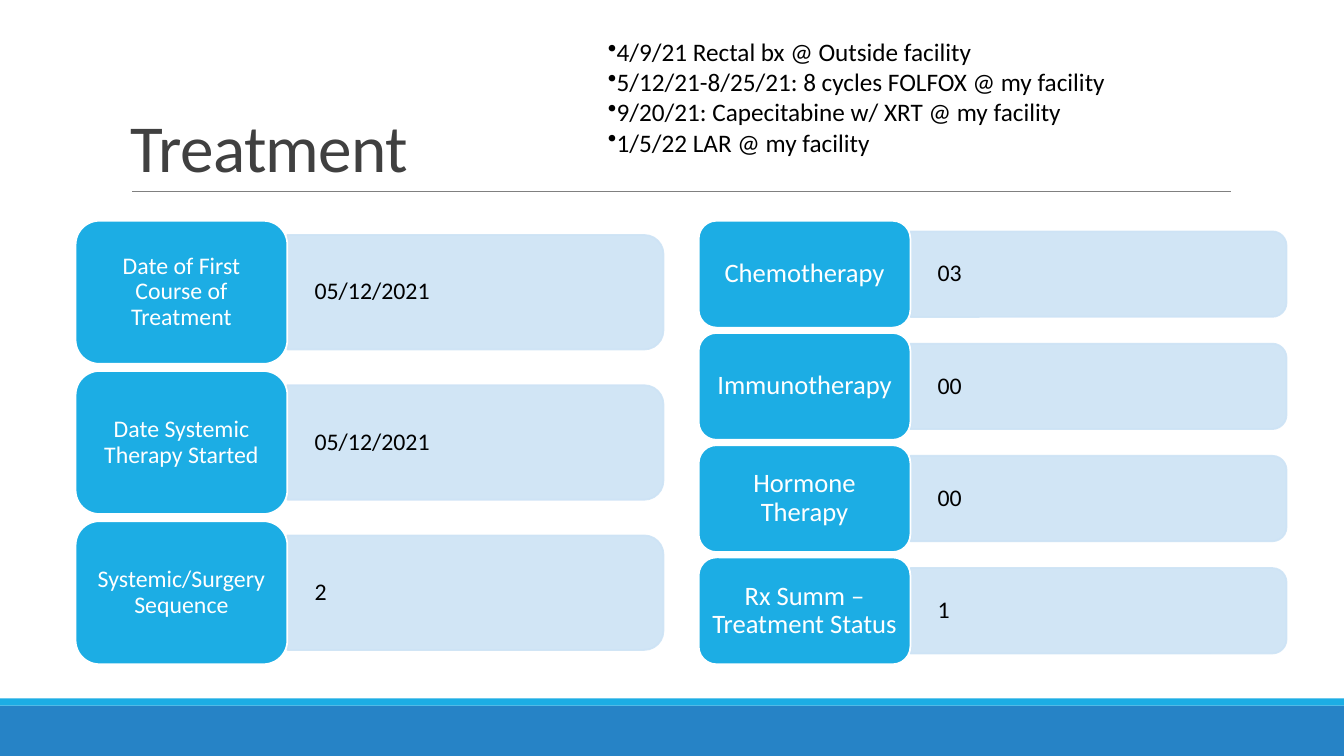
import pptx
import pptx.dml.color
import pptx.enum.shapes
import pptx.enum.text
import pptx.oxml
import pptx.oxml.ns
import pptx.util

Inches = pptx.util.Inches
Pt = pptx.util.Pt
Shape = pptx.enum.shapes.MSO_SHAPE
Align = pptx.enum.text.PP_ALIGN
Anchor = pptx.enum.text.MSO_ANCHOR
HUES = {"blue": "1CADE4", "base": "2683C6", "pale": "CDE3F5", "rule": "808080",
        "title": "404040", "black": "000000", "white": "FFFFFF"}
NOTES = ["4/9/21 Rectal bx @ Outside facility",
         "5/12/21-8/25/21: 8 cycles FOLFOX @ my facility",
         "9/20/21: Capecitabine w/ XRT @ my facility",
         "1/5/22 LAR @ my facility"]
DATES = [("Date of First Course of Treatment", "05/12/2021"),
         ("Date Systemic Therapy Started", "05/12/2021"),
         ("Systemic/Surgery Sequence", "2")]
CODES = [("Chemotherapy", "03"), ("Immunotherapy", "00"),
         ("Hormone Therapy", "00"), ("Rx Summ – Treatment Status", "1")]


class Deck:
    """Draws styled elements on the current slide."""

    def __init__(self, slide, face="Calibri"):
        self.slide = slide
        self.face = face

    def hue(self, name):
        return pptx.dml.color.RGBColor.from_string(HUES[name])

    def add(self, node, tag, **attrs):
        part = pptx.oxml.parse_xml(f'<a:{tag} {pptx.oxml.ns.nsdecls("a")}/>')
        for key, value in attrs.items():
            part.set(key, value)
        node.append(part)

    def shape(self, kind, left, top, width, height, fill, line=None):
        item = self.slide.shapes.add_shape(
            kind, Inches(left), Inches(top), Inches(width), Inches(height))
        item.shadow.inherit = False
        item.fill.solid()
        item.fill.fore_color.rgb = self.hue(fill)
        if line:
            item.line.color.rgb = self.hue(line)
            item.line.width = Pt(1.25)
        else:
            item.line.fill.background()
        return item

    def rule(self, left, top, right):
        item = self.slide.shapes.add_connector(
            pptx.enum.shapes.MSO_CONNECTOR.STRAIGHT,
            Inches(left), Inches(top), Inches(right), Inches(top))
        item.line.color.rgb = self.hue("rule")
        item.line.width = Pt(0.5)
        self.add(item._element.spPr, "effectLst")

    def box(self, left, top, width, height):
        return self.slide.shapes.add_textbox(
            Inches(left), Inches(top), Inches(width), Inches(height))

    def text(self, item, lines, size, color, align=Align.LEFT,
             anchor=Anchor.MIDDLE, inset=(0.1, 0.05), space=0.9):
        frame = item.text_frame
        frame.word_wrap = True
        frame.vertical_anchor = anchor
        frame.margin_left = frame.margin_right = Inches(inset[0])
        frame.margin_top = frame.margin_bottom = Inches(inset[1])
        frame.text = "\n".join(lines)
        for para in frame.paragraphs:
            para.alignment = align
            para.line_spacing = space
            para.font.name = self.face
            para.font.size = Pt(size)
            para.font.color.rgb = self.hue(color)
        return frame.paragraphs

    def title(self, words):
        para = self.text(self.box(1.2, 0.31, 11, 1.59), [words], 48, "title",
                         anchor=Anchor.BOTTOM, space=0.85)[0]
        para._p.pPr.find(pptx.oxml.ns.qn("a:defRPr")).set("spc", "-50")

    def notes(self, lines):
        paras = self.text(self.box(5.93, 0.31, 6.67, 1.31), lines, 18, "black",
                          anchor=Anchor.TOP, space=1.0)
        for para in paras:
            props = para._p.pPr
            self.add(props, "buChar", char="•")
            props.append(props.find(pptx.oxml.ns.qn("a:defRPr")))

    def bar(self, left, mid, width, height):
        item = self.shape(Shape.ROUND_2_SAME_RECTANGLE,
                          left + (width - height) / 2, mid - width / 2,
                          height, width, "pale", "pale")
        item.rotation = 90
        for node in item._element.spPr.iter(pptx.oxml.ns.qn("a:srgbClr")):
            self.add(node, "alpha", val="90000")

    def panel(self, left, rows, size):
        top, total, gap, wide = 2.19, 4.4, 0.05, 2.1
        high = total / (len(rows) + gap * (len(rows) - 1))
        for row, (name, value) in enumerate(rows):
            y = top + row * high * (1 + gap)
            mid = y + high / 2
            self.bar(left + wide, mid, 3.73, high * 0.8)
            field = self.box(left + wide, mid - high * 0.36, 3.68, high * 0.72)
            self.text(field, [value], 17, "black", inset=(0.27, 0.14))
            label = self.shape(Shape.ROUNDED_RECTANGLE, left, y, wide, high,
                               "blue", "white")
            self.text(label, [name], size, "white", Align.CENTER,
                      inset=(0.08, 0.05))


def main():
    show = pptx.Presentation()
    show.slide_width = Inches(13.33)
    show.slide_height = Inches(7.5)
    deck = Deck(show.slides.add_slide(show.slide_layouts[6]))
    deck.shape(Shape.RECTANGLE, 0, 7, 13.33, 0.5, "base")
    deck.shape(Shape.RECTANGLE, 0, 6.93, 13.33, 0.07, "blue")
    deck.rule(1.31, 1.9, 12.21)
    deck.title("Treatment")
    deck.panel(0.75, DATES, 17)
    deck.panel(6.93, CODES, 19)
    deck.notes(NOTES)
    show.save("out.pptx")


if __name__ == "__main__":
    main()
